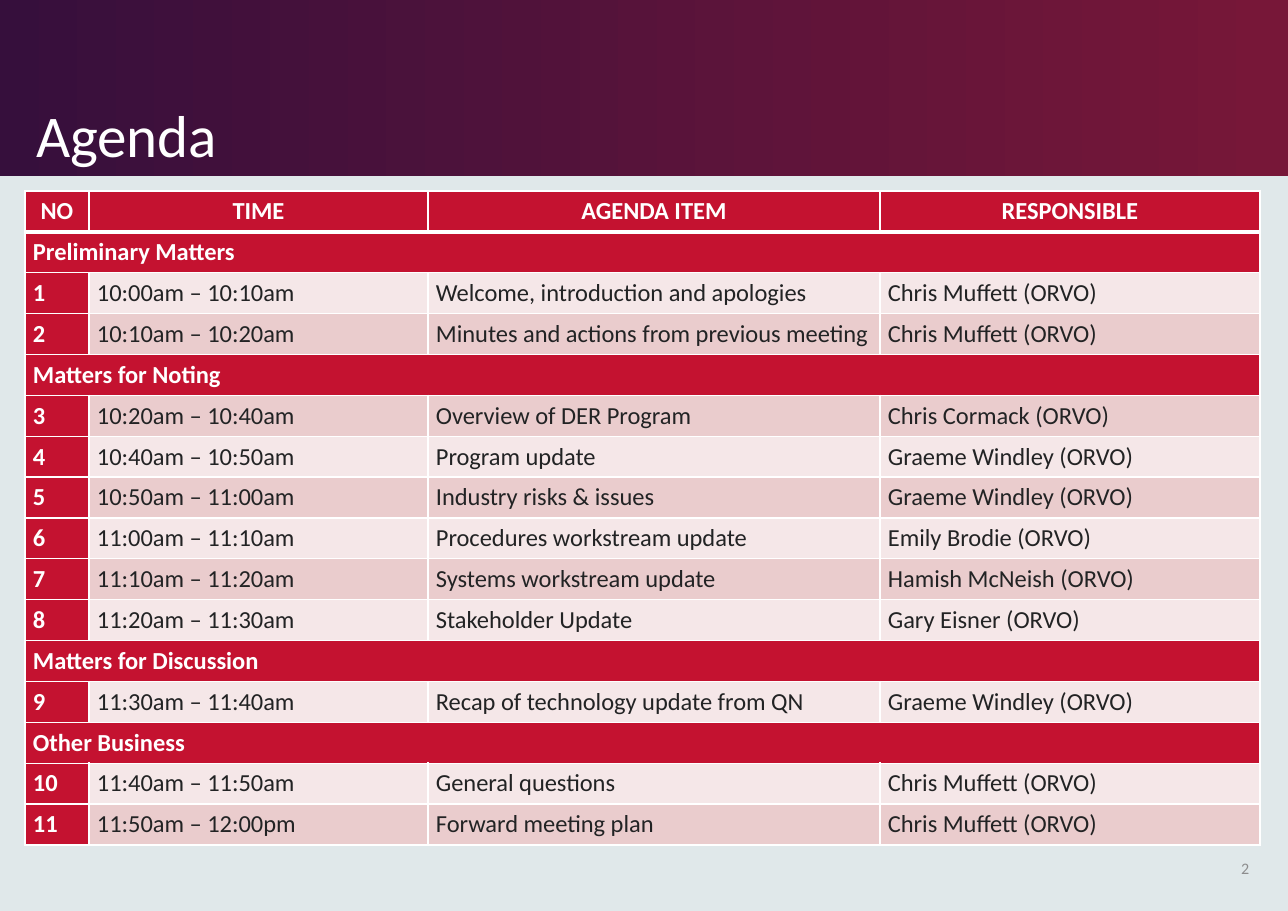
from lxml import etree
from pptx import Presentation
from pptx.dml.color import RGBColor
from pptx.enum.shapes import MSO_SHAPE
from pptx.enum.text import MSO_ANCHOR, MSO_AUTO_SIZE, PP_ALIGN
from pptx.oxml.ns import qn
from pptx.util import Pt

PX = 8298
FONT = "Calibri"
WHITE, RED, INK = "FFFFFF", "C41230", "222324"
STRIPES = ("F5E7E8", "EACCCD")
COLUMNS = (64, 339, 452, 380)
HEADINGS = ("NO", "TIME", "AGENDA ITEM", "RESPONSIBLE")
SECTIONS = {
    "Preliminary Matters": [
        ("10:00am – 10:10am", "Welcome, introduction and apologies", "Chris Muffett (ORVO)"),
        ("10:10am – 10:20am", "Minutes and actions from previous meeting", "Chris Muffett (ORVO)"),
    ],
    "Matters for Noting": [
        ("10:20am – 10:40am", "Overview of DER Program", "Chris Cormack (ORVO)"),
        ("10:40am – 10:50am", "Program update", "Graeme Windley (ORVO)"),
        ("10:50am – 11:00am", "Industry risks & issues", "Graeme Windley (ORVO)"),
        ("11:00am – 11:10am", "Procedures workstream update", "Emily Brodie (ORVO)"),
        ("11:10am – 11:20am", "Systems workstream update", "Hamish McNeish (ORVO)"),
        ("11:20am – 11:30am", "Stakeholder Update", "Gary Eisner (ORVO)"),
    ],
    "Matters for Discussion": [
        ("11:30am – 11:40am", "Recap of technology update from QN", "Graeme Windley (ORVO)"),
    ],
    "Other Business": [
        ("11:40am – 11:50am", "General questions", "Chris Muffett (ORVO)"),
        ("11:50am – 12:00pm", "Forward meeting plan", "Chris Muffett (ORVO)"),
    ],
}


def px(*lengths):
    """Turn pixel lengths into EMU."""
    return [length * PX for length in lengths]


def rgb(value):
    """Turn a hex string into a colour."""
    return RGBColor.from_string(value)


def write(tf, text, size, color, bold=False, align=PP_ALIGN.LEFT):
    """Put one formatted paragraph in a text frame and return it."""
    p = tf.paragraphs[0]
    p.text, p.alignment = text, align
    p.font.name, p.font.size, p.font.bold = FONT, Pt(size), bold
    p.font.color.rgb = rgb(color)
    return p


def add_banner(slide, x, y, w, h):
    """Draw the gradient band with the slide title at its foot."""
    band = slide.shapes.add_shape(MSO_SHAPE.RECTANGLE, *px(x, y, w, h))
    band.shadow.inherit = False
    band.line.fill.background()
    band.fill.gradient()
    band.fill.gradient_angle = 0
    for stop, position, color in zip(band.fill.gradient_stops, (0, 0.99), ("360F3C", "771738")):
        stop.position, stop.color.rgb = position, rgb(color)

    title = slide.shapes.title
    title.element.addprevious(band.element)
    title.left, title.top, title.width, title.height = px(x + 25, y + 18, 951, h - 18)
    tf = title.text_frame
    tf.auto_size, tf.vertical_anchor = MSO_AUTO_SIZE.NONE, MSO_ANCHOR.BOTTOM
    write(tf, "Agenda", 38.6, WHITE).line_spacing = 0.9


def set_borders(cell, top, bottom):
    """Give a cell white borders, with the top and bottom widths in points."""
    tc_pr = cell._tc.get_or_add_tcPr()
    for side, width in zip("LRTB", (1, 1, top, bottom)):
        ln = etree.SubElement(tc_pr, qn(f"a:ln{side}"), w=str(Pt(width)))
        fill = etree.SubElement(ln, qn("a:solidFill"))
        etree.SubElement(fill, qn("a:srgbClr"), val=WHITE)


def style_cell(cell, text, row, fill, color, bold, align):
    """Fill, border and write one agenda cell."""
    set_borders(cell, 3 if row == 1 else 1, 3 if row == 0 else 1)
    cell.fill.solid()
    cell.fill.fore_color.rgb = rgb(fill)
    cell.margin_left, cell.margin_right = px(8, 8)
    cell.margin_top = cell.margin_bottom = 0
    cell.vertical_anchor = MSO_ANCHOR.MIDDLE
    p = write(cell.text_frame, text, 16, color, bold, align)
    p.space_before = p.space_after = Pt(1)


def agenda_rows():
    """List the table rows, numbering the items across all sections."""
    rows, number = [HEADINGS], 0
    for section, items in SECTIONS.items():
        rows.append((section, "", "", ""))
        for item in items:
            number += 1
            rows.append((str(number), *item))
    return rows


def add_agenda(slide, x, y, w, h):
    """Draw the agenda table with full-width section rows."""
    rows = agenda_rows()
    frame = slide.shapes.add_table(len(rows), len(COLUMNS), *px(x, y, w, h))
    table = frame.table
    for column, width in zip(table.columns, COLUMNS):
        column.width = width * PX
    for i, texts in enumerate(rows):
        table.rows[i].height = h * PX // len(rows)
        is_section = texts[0] in SECTIONS
        align = PP_ALIGN.CENTER if i == 0 else PP_ALIGN.LEFT
        for j, text in enumerate(texts):
            strong = i == 0 or j == 0 or is_section
            fill, color = (RED, WHITE) if strong else (STRIPES[i % 2], INK)
            style_cell(table.cell(i, j), text, i, fill, color, strong, align)
        if is_section:
            table.cell(i, 0).merge(table.cell(i, len(COLUMNS) - 1))


def add_page_number(slide, x, y, w, h):
    """Write the page number at the right of its box."""
    tf = slide.shapes.add_textbox(*px(x, y, w, h)).text_frame
    tf.word_wrap, tf.vertical_anchor = True, MSO_ANCHOR.MIDDLE
    write(tf, "2", 10.5, "8D8D8E", align=PP_ALIGN.RIGHT)


def main():
    """Build and save the agenda slide."""
    prs = Presentation()
    prs.slide_width, prs.slide_height = px(1288, 911)
    slide = prs.slides.add_slide(prs.slide_layouts[5])
    slide.background.fill.solid()
    slide.background.fill.fore_color.rgb = rgb("E0E8EA")
    add_banner(slide, 0, 0, 1288, 176)
    add_agenda(slide, 25, 191, sum(COLUMNS), 654)
    add_page_number(slide, 1200, 844, 60, 49)
    prs.save("out.pptx")


if __name__ == "__main__":
    main()
